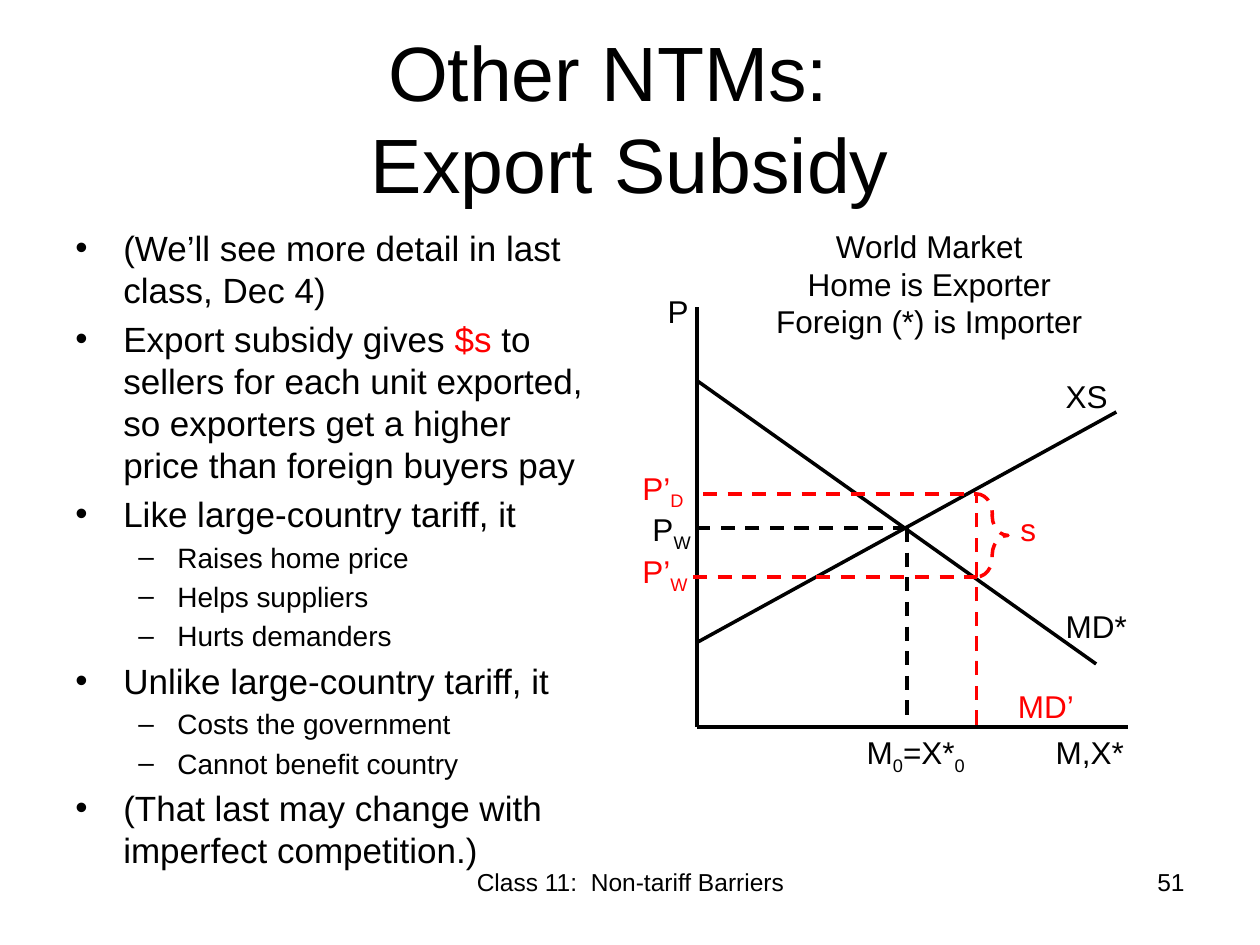
from dataclasses import dataclass

from lxml.etree import SubElement
from pptx import Presentation
from pptx.dml.color import RGBColor
from pptx.enum.dml import MSO_LINE_DASH_STYLE as Dash
from pptx.enum.shapes import MSO_CONNECTOR as Connector, MSO_SHAPE as Shape
from pptx.enum.text import MSO_ANCHOR as Anchor, PP_ALIGN as Align
from pptx.oxml.ns import qn
from pptx.util import Inches, Pt

COLORS = {"black": "000000", "red": "FF0000"}
FONT = "Arial"
LINE_WIDTH = Pt(2)

AXIS_X, AXIS_Y = 5.53, 5.77
FREE_M, SUBSIDY_M = 7.2, 7.75
PRICE_D, PRICE_FREE, PRICE_W = 3.92, 4.19, 4.58
LABEL_WIDTH, LABEL_HEIGHT = 0.75, 0.4


@dataclass(frozen=True)
class Span:
    text: str
    color: str = "black"
    subscript: bool = False


@dataclass(frozen=True)
class Label:
    left: float
    top: float
    spans: tuple[Span, ...]
    width: float = LABEL_WIDTH


@dataclass(frozen=True)
class Line:
    start: tuple[float, float]
    end: tuple[float, float]
    color: str = "black"
    dashed: bool = False


@dataclass(frozen=True)
class Level:
    size: int
    margin: float
    indent: float
    bullet: str


@dataclass(frozen=True)
class Bullet:
    level: int
    spans: tuple[Span, ...]


LEVELS = (Level(20, 0.38, -0.38, "•"), Level(16, 0.81, -0.31, "–"))

BULLETS = (
    Bullet(0, (Span("(We’ll see more detail in last class, Dec 4)"),)),
    Bullet(0, (
        Span("Export subsidy gives "),
        Span("$s", "red"),
        Span(" to sellers for each unit exported, so exporters get a higher "
             "price than foreign buyers pay"),
    )),
    Bullet(0, (Span("Like large-country tariff, it"),)),
    Bullet(1, (Span("Raises home price"),)),
    Bullet(1, (Span("Helps suppliers"),)),
    Bullet(1, (Span("Hurts demanders"),)),
    Bullet(0, (Span("Unlike large-country tariff, it"),)),
    Bullet(1, (Span("Costs the government"),)),
    Bullet(1, (Span("Cannot benefit country"),)),
    Bullet(0, (Span("(That last may change with imperfect competition.)"),)),
)

LINES = (
    Line((AXIS_X, AXIS_Y), (8.95, AXIS_Y)),
    Line((AXIS_X, AXIS_Y), (AXIS_X, 2.44)),
    Line((AXIS_X, 5.1), (8.86, 3.27)),
    Line((8.7, 5.27), (AXIS_X, 3.02)),
    Line((FREE_M, PRICE_FREE), (FREE_M, AXIS_Y), dashed=True),
    Line((FREE_M, PRICE_FREE), (AXIS_X, PRICE_FREE), dashed=True),
    Line((SUBSIDY_M, 5.75), (SUBSIDY_M, PRICE_D), "red", True),
    Line((5.58, PRICE_D), (SUBSIDY_M, PRICE_D), "red", True),
    Line((5.5, PRICE_W), (SUBSIDY_M, PRICE_W), "red", True),
)

LABELS = (
    Label(5.2, 2.27, (Span("P"),)),
    Label(8.36, 4.77, (Span("MD*"),)),
    Label(8.36, 2.94, (Span("XS"),)),
    Label(8.28, AXIS_Y, (Span("M,X*"),)),
    Label(6.78, AXIS_Y, (Span("M"), Span("0", subscript=True),
                         Span("=X*"), Span("0", subscript=True)), 1.08),
    Label(7.98, 5.4, (Span("MD’", "red"),)),
    Label(5.08, 4, (Span("P"), Span("W", subscript=True))),
    Label(5, 4.33, (Span("P’", "red"), Span("W", "red", True))),
    Label(5, 3.67, (Span("P’", "red"), Span("D", "red", True))),
    Label(8, 4, (Span("s", "red"),)),
)


def rgb(name: str) -> RGBColor:
    """Return the named colour."""
    return RGBColor.from_string(COLORS[name])


def format_font(font, size: int, color: str = "black") -> None:
    """Apply the slide font with a size and colour."""
    font.name = FONT
    font.size = Pt(size)
    font.color.rgb = rgb(color)


def add_frame(slide, left: float, top: float, width: float, height: float):
    """Add a wrapping text box and return its text frame."""
    box = slide.shapes.add_textbox(*map(Inches, (left, top, width, height)))
    box.text_frame.word_wrap = True
    return box.text_frame


def add_text(slide, box: tuple, text: str, size: int, align, anchor=Anchor.TOP) -> None:
    """Add a text box whose paragraphs share one format."""
    frame = add_frame(slide, *box)
    frame.vertical_anchor = anchor
    frame.text = text
    for paragraph in frame.paragraphs:
        paragraph.alignment = align
        for run in paragraph.runs:
            format_font(run.font, size)


def add_spans(paragraph, spans: tuple[Span, ...], size: int) -> None:
    """Write coloured and subscript runs into a paragraph."""
    for span in spans:
        run = paragraph.add_run()
        run.text = span.text
        format_font(run.font, size, span.color)
        if span.subscript:
            run.font._element.set("baseline", "-25000")


def add_label(slide, label: Label) -> None:
    """Add a diagram label."""
    frame = add_frame(slide, label.left, label.top, label.width, LABEL_HEIGHT)
    add_spans(frame.paragraphs[0], label.spans, 18)


def add_bullets(slide, bullets: tuple[Bullet, ...]) -> None:
    """Add the bulleted body text."""
    frame = add_frame(slide, 0.5, 1.75, 4.29, 4.95)
    for index, bullet in enumerate(bullets):
        level = LEVELS[bullet.level]
        paragraph = frame.add_paragraph() if index else frame.paragraphs[0]
        paragraph.level = bullet.level
        paragraph.space_before = Pt(level.size * 0.2)
        properties = paragraph._p.get_or_add_pPr()
        properties.set("marL", str(Inches(level.margin)))
        properties.set("indent", str(Inches(level.indent)))
        SubElement(properties, qn("a:buFont"), typeface=FONT)
        SubElement(properties, qn("a:buChar"), char=level.bullet)
        add_spans(paragraph, bullet.spans, level.size)


def format_line(line, color: str, dashed: bool) -> None:
    """Set the colour, width and dash of an outline."""
    line.color.rgb = rgb(color)
    line.width = LINE_WIDTH
    if dashed:
        line.dash_style = Dash.DASH


def add_line(slide, line: Line) -> None:
    """Add a straight diagram line without a shadow."""
    connector = slide.shapes.add_connector(
        Connector.STRAIGHT, *map(Inches, line.start + line.end))
    format_line(connector.line, line.color, line.dashed)
    SubElement(connector._element.spPr, qn("a:effectLst"))


def add_brace(slide) -> None:
    """Add the brace that spans the subsidy."""
    brace = slide.shapes.add_shape(Shape.RIGHT_BRACE, *map(
        Inches, (SUBSIDY_M, PRICE_D, 0.25, PRICE_W - PRICE_D)))
    brace.adjustments[0] = 0.61
    brace.shadow.inherit = False
    brace.fill.background()
    format_line(brace.line, "red", True)


def main() -> None:
    """Build and save the export subsidy slide."""
    presentation = Presentation()
    presentation.slide_width, presentation.slide_height = Inches(10), Inches(7.5)
    slide = presentation.slides.add_slide(presentation.slide_layouts[6])
    add_text(slide, (0.5, 0.3, 9, 1.25), "Other NTMs:  \vExport Subsidy", 44,
             Align.CENTER, Anchor.MIDDLE)
    add_bullets(slide, BULLETS)
    add_text(slide, (3.42, 6.83, 3.17, 0.52), "Class 11:  Non-tariff Barriers", 14, Align.CENTER)
    add_text(slide, (7.17, 6.83, 2.33, 0.52), "51", 14, Align.RIGHT)
    add_text(slide, (5.75, 1.75, 3.25, 1.01),
             "World Market\nHome is Exporter\nForeign (*) is Importer", 18, Align.CENTER)
    for line in LINES:
        add_line(slide, line)
    add_brace(slide)
    for label in LABELS:
        add_label(slide, label)
    presentation.save("out.pptx")


if __name__ == "__main__":
    main()
